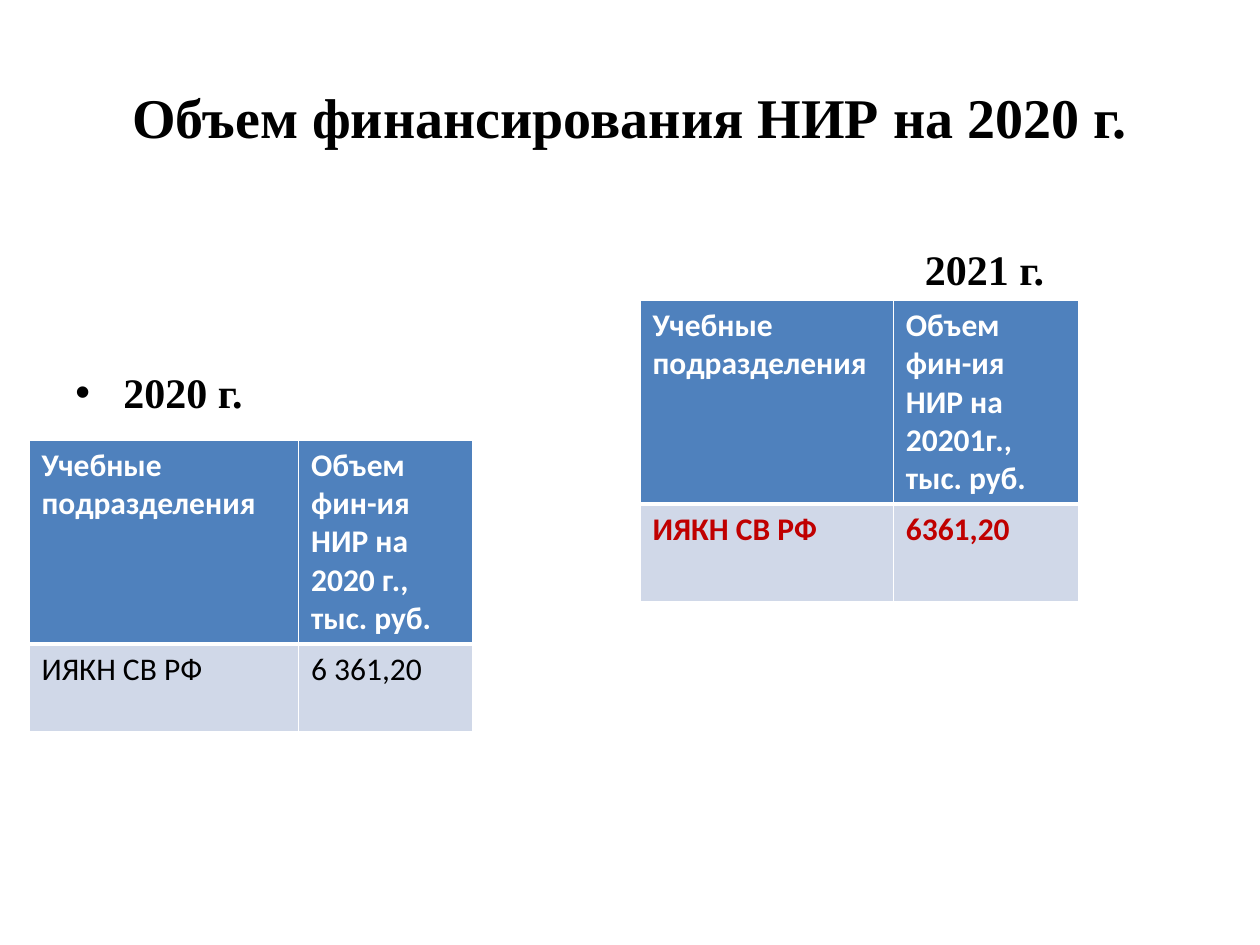
from lxml.etree import SubElement
from pptx import Presentation
from pptx.dml.color import RGBColor
from pptx.enum.text import MSO_ANCHOR as Anchor, PP_ALIGN as Align
from pptx.oxml.ns import qn
from pptx.util import Inches, Pt

# The slide is a grid of 100 columns by 75 rows of square cells
COLUMNS, ROWS = 100, 75
CELL = Inches(0.1)

BLACK = RGBColor(0x00, 0x00, 0x00)
WHITE = RGBColor(0xFF, 0xFF, 0xFF)
RED = RGBColor(0xC0, 0x00, 0x00)
HEADER_BLUE = RGBColor(0x4F, 0x81, 0xBD)
BODY_BLUE = RGBColor(0xD0, 0xD8, 0xE8)

HEADING_FONT = {"name": "Times New Roman", "bold": True}
TABLE_FONT = {"name": "Calibri", "size": Pt(18)}
THIN, THICK = Pt(1), Pt(3)


def grid(cells):
    return int(cells * CELL)


def apply_format(target, values):
    for attribute, value in values.items():
        setattr(target, attribute, value)


def write(frame, text, font, color):
    paragraph = frame.paragraphs[0]
    run = paragraph.add_run()
    run.text = text
    apply_format(run.font, font)
    run.font.color.rgb = color
    return paragraph


def add_heading(slide, text, box, size, layout, align=Align.LEFT):
    frame = slide.shapes.add_textbox(*map(grid, box)).text_frame
    apply_format(frame, {"word_wrap": True, **layout})
    paragraph = write(frame, text, {**HEADING_FONT, "size": Pt(size)}, BLACK)
    paragraph.alignment = align
    return paragraph


def add_bullet(paragraph, indent):
    properties = paragraph._p.get_or_add_pPr()
    properties.set("marL", str(grid(indent)))
    properties.set("indent", str(-grid(indent)))
    SubElement(properties, qn("a:buFont"), typeface="Arial")
    SubElement(properties, qn("a:buChar"), char="•")


def set_borders(cell, widths):
    properties = cell._tc.get_or_add_tcPr()
    for position, (side, width) in enumerate(widths.items()):
        line = SubElement(properties, qn(f"a:ln{side}"), w=str(width))
        fill = SubElement(line, qn("a:solidFill"))
        SubElement(fill, qn("a:srgbClr"), val=str(WHITE))
        properties.insert(position, line)


def add_funding_table(slide, origin, widths, heights, rows, body_color, body_bold):
    box = (*origin, sum(widths), sum(heights))
    table = slide.shapes.add_table(len(rows), len(widths), *map(grid, box)).table
    for column, width in zip(table.columns, widths):
        column.width = grid(width)
    for row, height in zip(table.rows, heights):
        row.height = grid(height)

    for r, texts in enumerate(rows):
        header = r == 0
        color, bold = (WHITE, True) if header else (body_color, body_bold)
        # The thick rule separates the header from the body
        borders = {"L": THIN, "R": THIN,
                   "T": THIN if header else THICK,
                   "B": THICK if header else THIN}
        for c, text in enumerate(texts):
            cell = table.cell(r, c)
            cell.fill.solid()
            cell.fill.fore_color.rgb = HEADER_BLUE if header else BODY_BLUE
            write(cell.text_frame, text, {**TABLE_FONT, "bold": bold}, color)
            set_borders(cell, borders)


def main():
    deck = Presentation()
    apply_format(deck, {"slide_width": grid(COLUMNS), "slide_height": grid(ROWS)})
    slide = deck.slides.add_slide(deck.slide_layouts[6])

    # Title
    add_heading(slide, "Объем финансирования НИР на 2020 г.", (5, 3, 90, 12.5), 32,
                {"vertical_anchor": Anchor.MIDDLE}, Align.CENTER)

    # Year headings
    year_2020 = add_heading(slide, "2020 г.", (5, 23.8, 44.2, 43.2), 24,
                            {"vertical_anchor": Anchor.TOP, "margin_top": grid(5.3)})
    add_bullet(year_2020, 3.8)
    add_heading(slide, "2021 г.", (50.8, 16.8, 44.2, 7), 24,
                {"vertical_anchor": Anchor.BOTTOM, "margin_left": grid(22.6)})

    # Funding in 2021
    add_funding_table(slide, (50.8, 23.8), (20.1, 14.7), (16.2, 7.8),
                      [("Учебные подразделения", "Объем фин-ия НИР на 20201г., тыс. руб."),
                       ("ИЯКН СВ РФ", "6361,20")], RED, True)

    # Funding in 2020
    add_funding_table(slide, (2.3, 34.9), (21.4, 13.8), (16.2, 7),
                      [("Учебные подразделения", "Объем фин-ия НИР на 2020 г., тыс. руб."),
                       ("ИЯКН СВ РФ", "6 361,20")], BLACK, False)

    deck.save("out.pptx")


if __name__ == "__main__":
    main()
